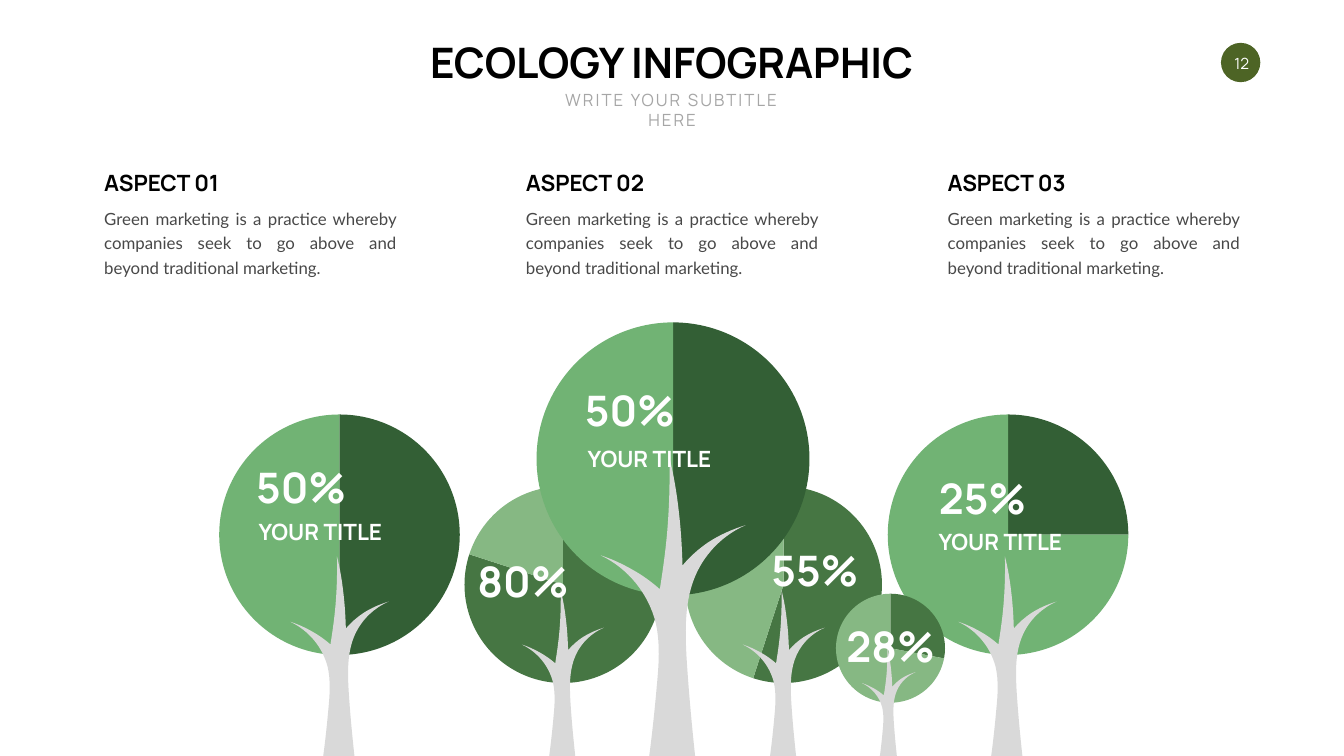
import pptx
import pptx.chart.data
import pptx.dml.color
import pptx.enum.chart
import pptx.enum.shapes
import pptx.enum.text
import pptx.oxml
import pptx.oxml.ns
import pptx.util

Pt = pptx.util.Pt
ALIGN = pptx.enum.text.PP_ALIGN
ANCHOR = pptx.enum.text.MSO_ANCHOR
OVAL = pptx.enum.shapes.MSO_SHAPE.OVAL

SLIDE_WIDTH, SLIDE_HEIGHT = 1919.52, 1080
WHITE, BLACK, GREY, TRUNK, BADGE = "FFFFFF", "000000", "484848", "D9D9D9", "4D6425"
FRONT_GREENS = ("335F35", "71B374")
BACK_GREENS = ("467643", "86B883")

# Trunk outline on a 287 x 592 grid: a start, then segments.
# Three points make a cubic curve, one point a straight line.
TRUNK_GRID = (287, 592)
TRUNK_START = (136, 0)
TRUNK_SEGMENTS = [
    ((137, 43), (136, 86), (133, 129)),
    ((130, 173), (124, 217), (117, 261)),
    ((100, 246), (82, 233), (64, 223)),
    ((43, 211), (22, 201), (0, 194)),
    ((54, 220), (94, 269), (109, 328)),
    ((118, 369), (115, 411), (111, 453)),
    ((107, 499), (102, 546), (96, 592)),
    ((187, 592),),
    ((180, 526), (174, 461), (170, 396)),
    ((167, 340), (166, 282), (189, 231)),
    ((209, 187), (244, 153), (287, 134)),
    ((261, 142), (236, 153), (213, 168)),
    ((194, 181), (177, 196), (162, 214)),
    ((161, 179), (159, 144), (155, 110)),
    ((151, 73), (145, 36), (136, 0)),
]

# Back to front: share, greens, crown (left, top, size), trunk (left, top, width),
# share label (left, top, width), title (left, top) or None.
TREES = [
    (55, BACK_GREENS, (977, 693.4, 284.4), (1060.6, 843.1, 117.2), (1090.8, 774, 146.2), None),
    (80, BACK_GREENS, (661.7, 693.4, 284.4), (745.2, 843.1, 117.2), (673.9, 789.1, 146.2), None),
    (50, FRONT_GREENS, (311, 590.4, 347.8), (414.7, 794.9, 140.4), (357.1, 656, 146.2),
     (362.2, 735.8)),
    (50, FRONT_GREENS, (763.9, 458.6, 394.6), (858.2, 653.8, 206.6), (826.6, 545, 146.2),
     (832.3, 631.4)),
    (25, FRONT_GREENS, (1265.8, 590.4, 347.8), (1368.7, 794.9, 140.4), (1332.7, 671, 141.1),
     (1333.4, 751)),
    (28, BACK_GREENS, (1193, 847.4, 157.7), (1231.2, 925.2, 76.3), (1201.7, 882.7, 141.1), None),
]
ASPECTS = ["ASPECT 01", "ASPECT 02", "ASPECT 03"]
ASPECT_TEXT = ("Green marketing is a practice whereby companies seek to go above "
               "and beyond traditional marketing.")


def color(value):
    return pptx.dml.color.RGBColor.from_string(value)


def paint(shape, value):
    shape.shadow.inherit = False
    shape.fill.solid()
    shape.fill.fore_color.rgb = color(value)
    shape.line.fill.background()


def write(shape, text, size, ink, font="Manrope", bold=False, align=ALIGN.LEFT,
          anchor=ANCHOR.MIDDLE, wrap=False, side=7.2):
    frame = shape.text_frame
    frame.word_wrap = wrap
    frame.auto_size = pptx.enum.text.MSO_AUTO_SIZE.NONE
    frame.vertical_anchor = anchor
    frame.margin_left = frame.margin_right = Pt(side)
    frame.margin_top = frame.margin_bottom = Pt(3.6)
    para = frame.paragraphs[0]
    para.text = text
    para.alignment = align
    para.font.size = Pt(size)
    para.font.name = font
    para.font.bold = bold
    para.font.color.rgb = color(ink)
    return para


def add_text(page, box, text, size, ink, **style):
    shape = page.shapes.add_textbox(*map(Pt, box))
    return write(shape, text, size, ink, **style)


def add_heading(page, left, top, width):
    title = page.shapes.title
    title.left, title.top, title.width, title.height = map(Pt, (left, top, width, 79.9))
    write(title, "ECOLOGY INFOGRAPHIC", 60, BLACK, bold=True,
          align=ALIGN.CENTER, anchor=ANCHOR.TOP)
    subtitle_width = 391
    box = (left + (width - subtitle_width) / 2 + 0.5, top + 76, subtitle_width, 36)
    para = add_text(page, box, "WRITE YOUR SUBTITLE HERE", 24, "A6A6A6",
                    align=ALIGN.CENTER, anchor=ANCHOR.TOP, wrap=True)
    para.runs[0].font._element.set("spc", "300")


def add_page_number(page, left, top, size):
    badge = page.shapes.add_shape(OVAL, *map(Pt, (left, top, size, size)))
    paint(badge, BADGE)
    add_text(page, (left + 1.4, top + 1.4, size, size), "12", 22, WHITE,
             align=ALIGN.CENTER, side=3.6, wrap=True)


def add_aspect(page, left, top, width, heading):
    add_text(page, (left, top, 186, 46), heading, 32, BLACK, bold=True)
    para = add_text(page, (left, top + 50.4, width, 109.4), ASPECT_TEXT, 24, GREY,
                    font="Lato", align=ALIGN.JUSTIFY, anchor=ANCHOR.TOP, wrap=True)
    para.line_spacing = Pt(35)
    para.space_before = Pt(4.8)


def fill_plot_area(chart):
    """Stretch the pie to the edges of its frame."""
    area = chart._chartSpace.chart.plotArea
    for layout in area.findall(pptx.oxml.ns.qn("c:layout")):
        area.remove(layout)
    settings = [("layoutTarget", "inner"), ("xMode", "edge"), ("yMode", "edge"),
                ("x", 0.005), ("y", 0.005), ("w", 0.99), ("h", 0.988)]
    tags = "".join(f'<c:{tag} val="{value}"/>' for tag, value in settings)
    area.insert(0, pptx.oxml.parse_xml(
        f'<c:layout {pptx.oxml.ns.nsdecls("c")}><c:manualLayout>{tags}'
        '</c:manualLayout></c:layout>'))


def add_crown(page, left, top, size, share, greens):
    data = pptx.chart.data.CategoryChartData()
    data.categories = ["1", "2"]
    data.add_series("Series 1", (share, 100 - share))
    chart = page.shapes.add_chart(pptx.enum.chart.XL_CHART_TYPE.PIE,
                                  *map(Pt, (left, top, size, size)), data).chart
    chart.has_legend = False
    chart.has_title = False
    chart.font.size = Pt(10)
    chart.font.name = "Calibri"
    chart.font.color.rgb = color(GREY)
    plot = chart.plots[0]
    plot.vary_by_categories = False
    for index, green in enumerate(greens):
        slice_format = plot.series[0].points[index].format
        slice_format.fill.solid()
        slice_format.fill.fore_color.rgb = color(green)
        slice_format.line.fill.background()
    fill_plot_area(chart)


def add_trunk(page, left, top, width):
    """Draw a trunk that stands on the bottom edge of the slide."""
    across = Pt(width) / TRUNK_GRID[0]
    down = Pt(SLIDE_HEIGHT - top) / TRUNK_GRID[1]
    builder = page.shapes.build_freeform(*TRUNK_START, scale=(across, down))
    builder.add_line_segments([segment[-1] for segment in TRUNK_SEGMENTS], close=True)
    trunk = builder.convert_to_shape(Pt(left), Pt(top))
    paint(trunk, TRUNK)
    qn = pptx.oxml.ns.qn
    lines = list(trunk._element.iter(qn("a:lnTo")))
    for line, segment in zip(lines, TRUNK_SEGMENTS):
        if len(segment) == 3:
            points = "".join(f'<a:pt x="{x}" y="{y}"/>' for x, y in segment)
            line.getparent().replace(line, pptx.oxml.parse_xml(
                f'<a:cubicBezTo {pptx.oxml.ns.nsdecls("a")}>{points}</a:cubicBezTo>'))


def add_forest(page):
    for share, greens, crown, trunk, _, _ in TREES:
        add_crown(page, *crown, share, greens)
        add_trunk(page, *trunk)
    for share, _, _, _, (left, top, width), title in TREES:
        add_text(page, (left, top, width, 79.9), f"{share}%", 60, WHITE,
                 bold=True, align=ALIGN.CENTER)
        if title:
            add_text(page, (*title, 199.4, 46), "YOUR TITLE", 32, WHITE, bold=True)


def main():
    deck = pptx.Presentation()
    deck.slide_width, deck.slide_height = Pt(SLIDE_WIDTH), Pt(SLIDE_HEIGHT)
    page = deck.slides.add_slide(deck.slide_layouts.get_by_name("Title Only"))
    add_page_number(page, 1743.8, 61.2, 56.2)
    add_forest(page)
    add_heading(page, 590.4, 48.2, 738)
    for column, heading in enumerate(ASPECTS):
        add_aspect(page, 141.8 + column * 602.3, 237.6, 431.3, heading)
    deck.save("out.pptx")


if __name__ == "__main__":
    main()
